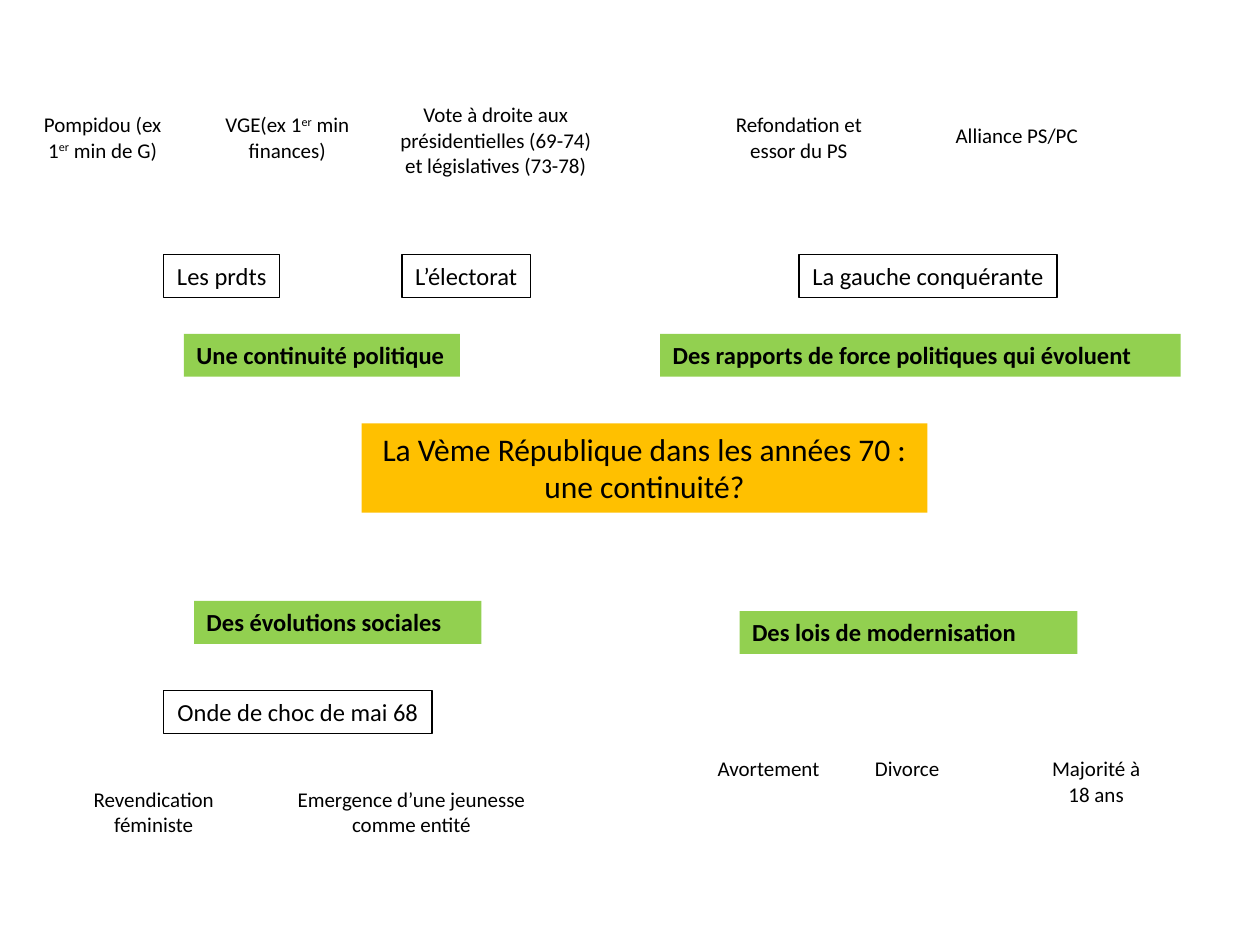
from dataclasses import dataclass

from pptx import Presentation
from pptx.dml.color import RGBColor
from pptx.enum.text import MSO_AUTO_SIZE, PP_ALIGN
from pptx.util import Inches, Pt

LEFT, CENTER = PP_ALIGN.LEFT, PP_ALIGN.CENTER
GROW = MSO_AUTO_SIZE.SHAPE_TO_FIT_TEXT


@dataclass(frozen=True)
class Theme:
    font: str = "Calibri"
    ink: RGBColor = RGBColor(0x00, 0x00, 0x00)
    orange: RGBColor = RGBColor(0xFF, 0xC0, 0x00)
    green: RGBColor = RGBColor(0x92, 0xD0, 0x50)
    question_size: Pt = Pt(18)
    heading_size: Pt = Pt(14)
    detail_size: Pt = Pt(12)
    border: Pt = Pt(0.75)


theme = Theme()

QUESTION = {"size": theme.question_size, "align": CENTER, "fill": theme.orange}
THEME_HEADING = {"size": theme.heading_size, "align": LEFT, "fill": theme.green, "bold": True}
SUBTOPIC = {"size": theme.heading_size, "align": CENTER, "outlined": True, "wrap": False}
DETAIL = {"size": theme.detail_size, "align": CENTER}


def add_label(page, text, left, top, width, height, style):
    """Add one text box; text between ^ marks is superscript."""
    box = page.shapes.add_textbox(Inches(left), Inches(top), Inches(width), Inches(height))
    if "fill" in style:
        box.fill.solid()
        box.fill.fore_color.rgb = style["fill"]
    if style.get("outlined"):
        box.line.color.rgb = theme.ink
        box.line.width = theme.border
    frame = box.text_frame
    frame.word_wrap = style.get("wrap", True)
    frame.auto_size = GROW
    para = frame.paragraphs[0]
    para.alignment = style["align"]
    font_values = {"name": theme.font, "size": style["size"], "bold": style.get("bold", False)}
    for index, part in enumerate(text.split("^")):
        span = para.add_run()
        span.text = part
        for name, value in font_values.items():
            setattr(span.font, name, value)
        span.font.color.rgb = theme.ink
        if index % 2:
            span._r.get_or_add_rPr().set("baseline", "30000")


deck = Presentation()
deck.slide_width, deck.slide_height = Inches(10), Inches(7.5)
page = deck.slides.add_slide(deck.slide_layouts[6])

add_label(page, "La Vème République dans les années 70 : une continuité?",
          2.87, 3.36, 4.49, 0.71, QUESTION)

# Text, left, top, width
theme_headings = [
    ("Une continuité politique", 1.46, 2.65, 2.19),
    ("Des rapports de force politiques qui évoluent", 5.24, 2.65, 4.13),
    ("Des évolutions sociales", 1.54, 4.77, 2.28),
    ("Des lois de modernisation", 5.87, 4.85, 2.68),
]
subtopics = [
    ("Les prdts", 1.3, 2.02, 0.92),
    ("L’électorat", 3.19, 2.02, 1.02),
    ("La gauche conquérante", 6.34, 2.02, 2.05),
    ("Onde de choc de mai 68", 1.3, 5.48, 2.13),
]
for labels, style in ((theme_headings, THEME_HEADING), (subtopics, SUBTOPIC)):
    for text, left, top, width in labels:
        add_label(page, text, left, top, width, 0.34, style)

# Text, left, top, width, height
details = [
    ("Pompidou (ex 1^er^ min de G)", 0.2, 0.84, 1.23, 0.5),
    ("VGE(ex 1^er^ min finances)", 1.69, 0.84, 1.18, 0.5),
    ("Vote à droite aux présidentielles (69-74) et législatives (73-78)", 3.03, 0.76, 1.81, 0.71),
    ("Refondation et essor du PS", 5.63, 0.84, 1.42, 0.5),
    ("Alliance PS/PC", 7.36, 0.92, 1.42, 0.3),
    ("Revendication féministe", 0.51, 6.19, 1.42, 0.5),
    ("Emergence d’une jeunesse comme entité", 2.24, 6.19, 2.05, 0.5),
    ("Avortement", 5.55, 5.95, 1.1, 0.3),
    ("Divorce", 6.65, 5.95, 1.1, 0.3),
    ("Majorité à 18 ans", 8.15, 5.95, 1.1, 0.5),
]
for detail in details:
    add_label(page, *detail, DETAIL)

deck.save("out.pptx")
